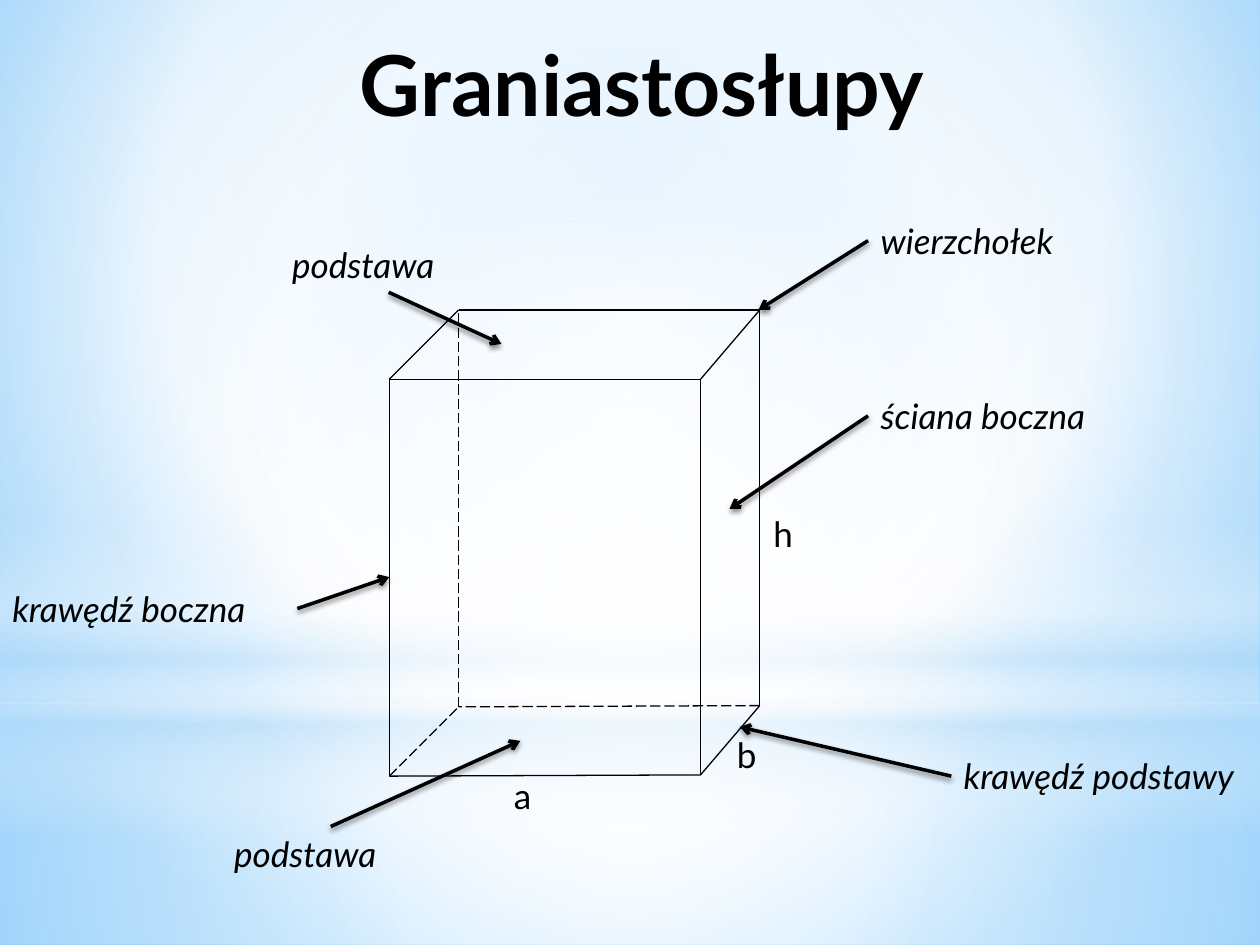
from dataclasses import dataclass
from itertools import pairwise

from lxml import etree
from pptx import Presentation
from pptx.dml.color import RGBColor
from pptx.enum.dml import MSO_LINE
from pptx.enum.shapes import MSO_CONNECTOR, MSO_SHAPE
from pptx.enum.text import MSO_AUTO_SIZE, PP_ALIGN
from pptx.oxml import parse_xml
from pptx.oxml.ns import nsdecls, qn
from pptx.util import Inches, Pt

FONT = "Lato"
BLACK, WHITE, SKY = "000000", "FFFFFF", "B4DCFA"
TOP, LEFT, BOTTOM, RIGHT = range(4)
CENTRE = (50, 50, 50, 50)

Point = tuple[float, float]
Box = tuple[float, float, float, float]


@dataclass
class Stop:
    position: int
    colour: str
    opacity: int = 100


@dataclass
class Gradient:
    """A radial gradient around a focus rectangle, or a linear one when focus is None."""
    stops: list[Stop]
    focus: Box | None = CENTRE
    angle: int = 0


@dataclass
class Layer:
    preset: MSO_SHAPE
    box: Box
    gradient: Gradient


@dataclass
class Callout:
    text: str
    box: Box
    side: int
    target: Point


BACKGROUND = Gradient(
    [Stop(0, "9ED5FF"), Stop(60, WHITE), Stop(100, "5BB9FF")], (20, 10, 20, 60))
LAYERS = [
    Layer(MSO_SHAPE.RECTANGLE, (0, 5.58, 10, 1.92), Gradient(
        [Stop(0, WHITE, 91), Stop(37, WHITE, 76), Stop(100, SKY, 79)])),
    Layer(MSO_SHAPE.RECTANGLE, (0, 0, 10, 5.58), Gradient(
        [Stop(0, WHITE, 89), Stop(48, WHITE, 62), Stop(100, SKY, 79)])),
    Layer(MSO_SHAPE.RECTANGLE, (0, 4.12, 10, 2.5), Gradient(
        [Stop(0, WHITE, 0), Stop(29, WHITE, 30), Stop(45, SKY, 40),
         Stop(55, WHITE, 26), Stop(65, SKY, 60), Stop(100, WHITE, 0)], None, 90)),
    Layer(MSO_SHAPE.OVAL, (0, 1.75, 10, 5.58), Gradient(
        [Stop(0, WHITE), Stop(56, WHITE, 0)])),
]

# Corners run top left, top right, bottom right, bottom left.
FRONT = [(3.09, 3.01), (5.56, 3.01), (5.56, 6.15), (3.09, 6.16)]
BACK = [(3.64, 2.46), (6.03, 2.46), (6.03, 5.6), (3.64, 5.61)]
HIDDEN_CORNER = BACK[3]
DIMENSIONS = [
    ("h", (6.04, 4.02, 0.47, 0.44)),
    ("b", (5.75, 5.77, 0.71, 0.44)),
    ("a", (3.98, 6.1, 0.55, 0.44)),
]
CALLOUTS = [
    Callout("podstawa", (1.76, 6.56, 1.73, 0.44), TOP, (4.13, 5.88)),
    Callout("wierzchołek", (6.89, 1.69, 2.13, 0.44), LEFT, (6.02, 2.46)),
    Callout("ściana boczna", (6.89, 3.08, 2.68, 0.44), LEFT, (5.79, 4.04)),
    Callout("krawędź boczna", (0, 4.61, 2.36, 0.44), RIGHT, (3.09, 4.58)),
    Callout("krawędź podstawy", (7.55, 5.94, 2.6, 0.44), LEFT, (5.87, 5.77)),
    Callout("podstawa", (2.22, 1.88, 1.73, 0.44), BOTTOM, (3.98, 2.73)),
]


def rgb(colour: str) -> RGBColor:
    return RGBColor.from_string(colour)


def apply_gradient(parent, gradient: Gradient) -> None:
    """Replace the solid fill inside parent by the gradient."""
    stops = "".join(
        f'<a:gs pos="{stop.position * 1000}"><a:srgbClr val="{stop.colour}">'
        f'<a:alpha val="{stop.opacity * 1000}"/></a:srgbClr></a:gs>'
        for stop in gradient.stops)
    if gradient.focus:
        sides = " ".join(f'{side}="{value * 1000}"'
                         for side, value in zip("ltrb", gradient.focus))
        course = f'<a:path path="circle"><a:fillToRect {sides}/></a:path>'
    else:
        course = f'<a:lin ang="{gradient.angle * 60000}" scaled="0"/>'
    fill = parse_xml(f'<a:gradFill {nsdecls("a")} rotWithShape="1">'
                     f'<a:gsLst>{stops}</a:gsLst>{course}</a:gradFill>')
    parent.replace(parent.find(qn("a:solidFill")), fill)


def add_layer(shapes, layer: Layer) -> None:
    shape = shapes.add_shape(layer.preset, *map(Inches, layer.box))
    shape.shadow.inherit = False
    shape.line.fill.background()
    shape.fill.solid()
    apply_gradient(shape.element.spPr, layer.gradient)


def add_text(shapes, text: str, box: Box, size: int = 20,
             bold: bool = False, italic: bool = False, title: bool = False):
    label = shapes.add_textbox(*map(Inches, box))
    frame = label.text_frame
    frame.word_wrap = not title
    frame.auto_size = MSO_AUTO_SIZE.SHAPE_TO_FIT_TEXT
    frame.text = text
    para = frame.paragraphs[0]
    para.alignment = PP_ALIGN.CENTER if title else PP_ALIGN.LEFT
    font = para.runs[0].font
    font.name, font.size, font.bold, font.italic = FONT, Pt(size), bold, italic
    font.color.rgb = rgb(BLACK)
    return label


def add_line(shapes, start: Point, end: Point, width: float):
    """Add a black straight line with an empty effect list."""
    line = shapes.add_connector(MSO_CONNECTOR.STRAIGHT, *map(Inches, start + end))
    line.line.color.rgb = rgb(BLACK)
    line.line.width = Pt(width)
    etree.SubElement(line.element.spPr, qn("a:effectLst"))
    return line


def add_edge(shapes, start: Point, end: Point) -> None:
    edge = add_line(shapes, start, end, 0.75)
    if HIDDEN_CORNER in (start, end):
        edge.line.dash_style = MSO_LINE.LONG_DASH


def add_prism(slide) -> None:
    prism = slide.shapes.add_group_shape().shapes
    for face in (FRONT, BACK):
        for start, end in pairwise(face + face[:1]):
            add_edge(prism, start, end)
    for front, back in zip(FRONT, BACK):
        add_edge(prism, front, back)
    for text, box in DIMENSIONS:
        add_text(prism, text, box)


def add_callout(shapes, callout: Callout) -> None:
    label = add_text(shapes, callout.text, callout.box, italic=True)
    arrow = add_line(shapes, callout.target, callout.target, 2)
    arrow.begin_connect(label, callout.side)
    properties = arrow.element.spPr
    etree.SubElement(properties.find(qn("a:ln")), qn("a:tailEnd"), type="arrow")
    properties.find(qn("a:effectLst")).append(parse_xml(
        f'<a:outerShdw {nsdecls("a")} blurRad="{Pt(3.1)}" dist="{Pt(1.8)}" '
        f'dir="5400000" rotWithShape="0"><a:srgbClr val="{BLACK}">'
        '<a:alpha val="45000"/></a:srgbClr></a:outerShdw>'))


def main() -> None:
    deck = Presentation()
    deck.slide_width, deck.slide_height = Inches(10), Inches(7.5)
    slide = deck.slides.add_slide(deck.slide_layouts[6])
    slide.background.fill.solid()
    apply_gradient(slide.element.find(f".//{qn('p:bgPr')}"), BACKGROUND)
    for layer in LAYERS:
        add_layer(slide.shapes, layer)
    add_prism(slide)
    for callout in CALLOUTS:
        add_callout(slide.shapes, callout)
    add_text(slide.shapes, "Graniastosłupy", (2.69, 0.21, 4.81, 0.91),
             size=48, bold=True, title=True)
    deck.save("out.pptx")


if __name__ == "__main__":
    main()
